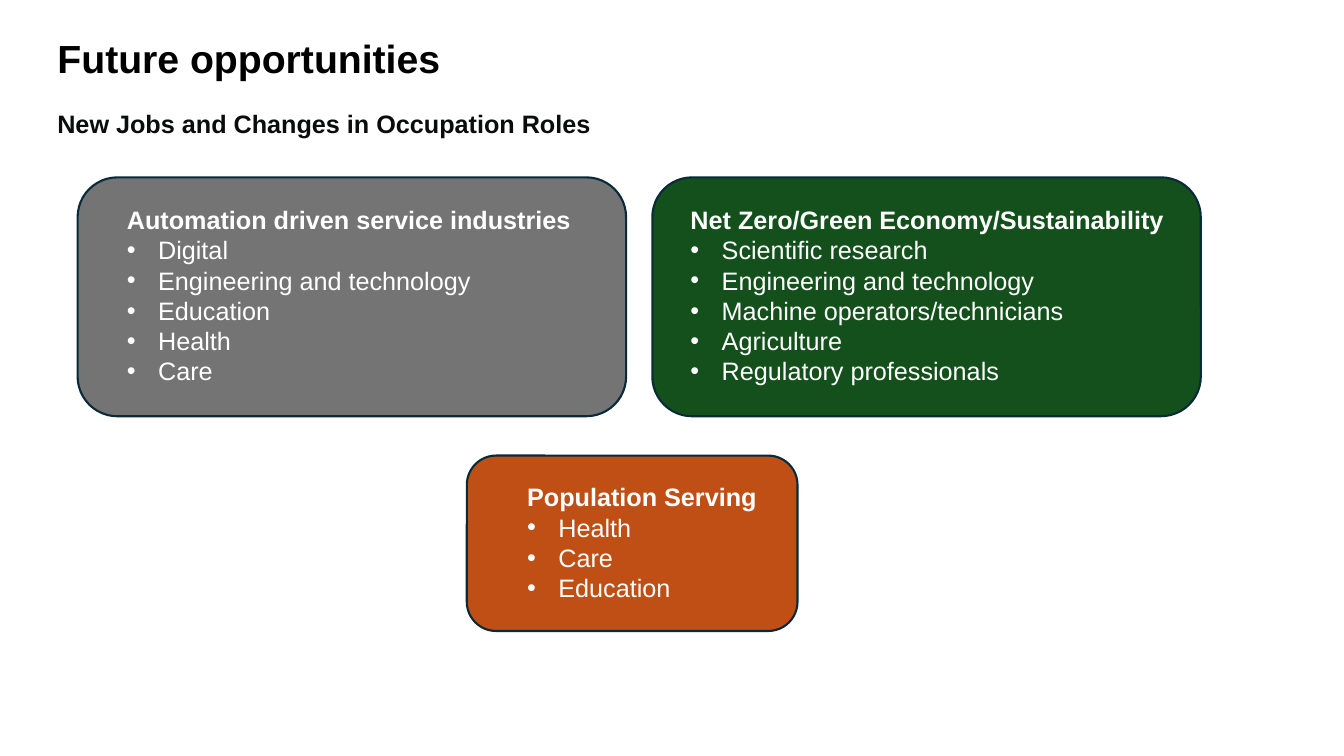
from dataclasses import dataclass

from lxml import etree
from pptx import Presentation
from pptx.dml.color import RGBColor as RGB
from pptx.enum.shapes import MSO_SHAPE as Shape
from pptx.enum.text import MSO_ANCHOR as Anchor, MSO_AUTO_SIZE as AutoSize, PP_ALIGN as Align
from pptx.oxml.ns import qn
from pptx.util import Inches, Pt


@dataclass(frozen=True)
class Theme:
    font: str = "Arial"
    title_size: int = 28
    body_size: int = 18
    bullet_pitch: float = 21.6
    title: str = "000000"
    subtitle: str = "0B0C0C"
    card_text: str = "FFFFFF"
    outline: str = "092A39"
    automation: str = "747474"
    net_zero: str = "13501B"
    population: str = "C04F15"


theme = Theme()


def style(paragraph, size, color, bold):
    paragraph.alignment = Align.LEFT
    for run in paragraph.runs:
        run.font.name = theme.font
        run.font.size = Pt(size)
        run.font.bold = bold
        run.font.color.rgb = RGB.from_string(color)


def add_bullet(paragraph):
    properties = paragraph._p.get_or_add_pPr()
    properties.set("marL", str(Inches(0.31)))
    properties.set("indent", str(Inches(-0.31)))
    etree.SubElement(properties, qn("a:buFont")).set("typeface", theme.font)
    etree.SubElement(properties, qn("a:buChar")).set("char", "•")
    paragraph.line_spacing = Pt(theme.bullet_pitch)


presentation = Presentation()
presentation.slide_width = Inches(13.33)
presentation.slide_height = Inches(7.5)
slide = presentation.slides.add_slide(presentation.slide_layouts[5])

# Title
title = slide.shapes.title
title.left, title.top = Inches(0.47), Inches(0.29)
title.width, title.height = Inches(6.67), Inches(0.57)
title.text_frame.text = "Future opportunities"
title.text_frame.vertical_anchor = Anchor.TOP
title.text_frame.auto_size = AutoSize.NONE
style(title.text_frame.paragraphs[0], theme.title_size, theme.title, True)

# Subtitle
subtitle = slide.shapes.add_textbox(Inches(0.47), Inches(1.03), Inches(5.62), Inches(0.4))
subtitle.text_frame.word_wrap = True
subtitle.text_frame.text = "New Jobs and Changes in Occupation Roles"
style(subtitle.text_frame.paragraphs[0], theme.body_size, theme.subtitle, True)

# Cards: fill, card box, text box, heading, bullets
cards = [
    (theme.automation, (0.77, 1.76, 5.44, 2.37), (1.16, 1.98, 4.65, 1.92),
     "Automation driven service industries",
     ["Digital", "Engineering and technology", "Education", "Health", "Care"]),
    (theme.net_zero, (6.47, 1.76, 5.44, 2.37), (6.75, 1.98, 5.25, 1.92),
     "Net Zero/Green Economy/Sustainability",
     ["Scientific research", "Engineering and technology", "Machine operators/technicians",
      "Agriculture", "Regulatory professionals"]),
    (theme.population, (4.63, 4.52, 3.28, 1.74), (5.13, 4.73, 2.5, 1.31),
     "Population Serving",
     ["Health", "Care", "Education"]),
]
for fill, card_box, text_box, heading, bullets in cards:
    card = slide.shapes.add_shape(Shape.ROUNDED_RECTANGLE, *map(Inches, card_box))
    card.shadow.inherit = False
    card.fill.solid()
    card.fill.fore_color.rgb = RGB.from_string(fill)
    card.line.color.rgb = RGB.from_string(theme.outline)
    card.line.width = Pt(1.5)

    text_frame = slide.shapes.add_textbox(*map(Inches, text_box)).text_frame
    text_frame.word_wrap = True
    text_frame.text = heading
    style(text_frame.paragraphs[0], theme.body_size, theme.card_text, True)
    for bullet in bullets:
        paragraph = text_frame.add_paragraph()
        paragraph.text = bullet
        add_bullet(paragraph)
        style(paragraph, theme.body_size, theme.card_text, False)

presentation.save("out.pptx")
